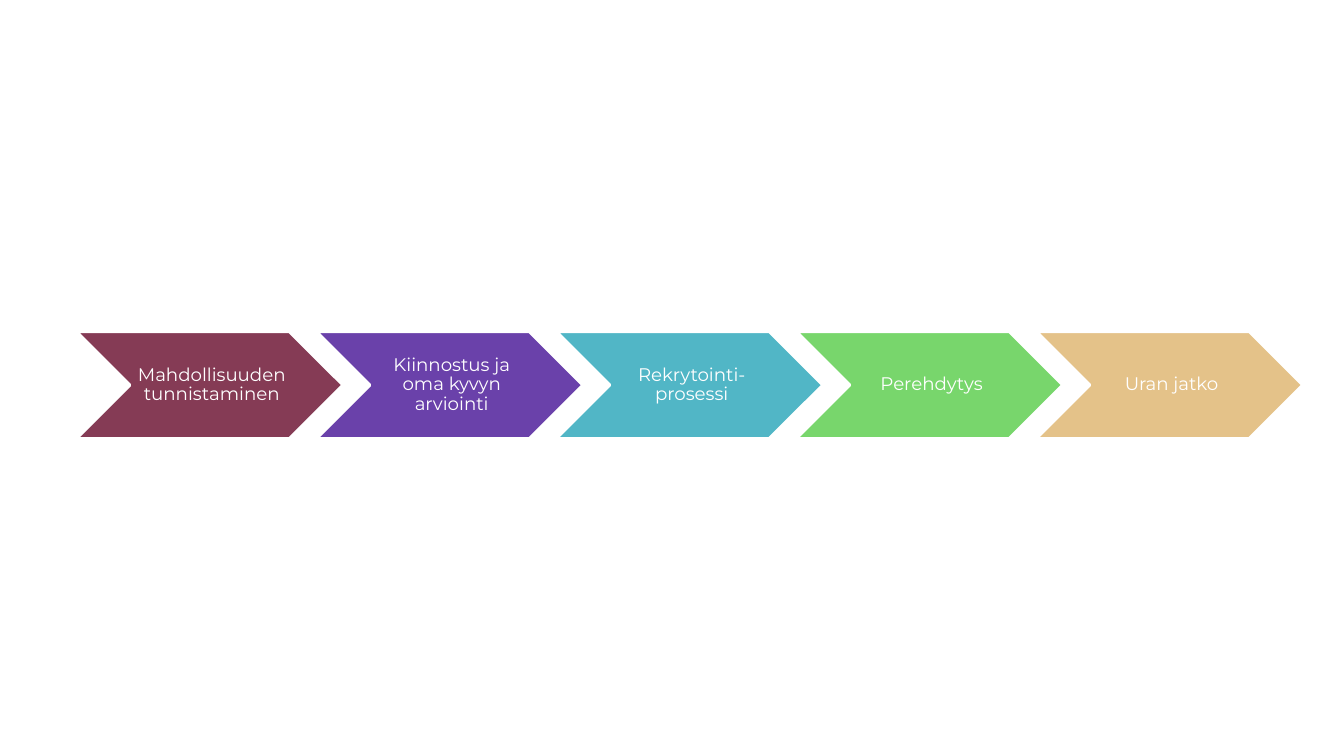
from dataclasses import dataclass

from pptx import Presentation
from pptx.dml.color import RGBColor
from pptx.enum.shapes import MSO_SHAPE as Shape
from pptx.enum.text import MSO_ANCHOR as Anchor, PP_ALIGN as Align
from pptx.util import Inches, Pt


@dataclass(frozen=True)
class Theme:
    """Colours and type of the slide."""
    font: str = "Montserrat"
    text_size: float = 13
    outline_width: float = 2
    white: str = "FFFFFF"
    plum: str = "853B55"
    violet: str = "6A41AA"
    teal: str = "51B6C6"
    green: str = "78D66C"
    sand: str = "E4C289"


THEME = Theme()
STEPS = [
    ("Mahdollisuuden tunnistaminen", THEME.plum),
    ("Kiinnostus ja oma kyvyn arviointi", THEME.violet),
    ("Rekrytointi-prosessi", THEME.teal),
    ("Perehdytys", THEME.green),
    ("Uran jatko", THEME.sand),
]
FIRST_LEFT, TOP, WIDTH, HEIGHT = 0.76, 3.29, 2.64, 1.06
STEP_PITCH = 2.38


def write_label(shape, text):
    """Write a centred label inside a shape."""
    frame = shape.text_frame
    frame.word_wrap = True
    frame.vertical_anchor = Anchor.MIDDLE
    frame.margin_left = Inches(0.06)
    frame.margin_top = frame.margin_right = frame.margin_bottom = Inches(0.02)
    paragraph = frame.paragraphs[0]
    paragraph.alignment = Align.CENTER
    paragraph.line_spacing = 0.9
    run = paragraph.add_run()
    run.text = text
    run.font.name = THEME.font
    run.font.size = Pt(THEME.text_size)
    run.font.color.rgb = RGBColor.from_string(THEME.white)


def add_step(slide, left, text, colour):
    """Add one chevron of the process."""
    shape = slide.shapes.add_shape(
        Shape.CHEVRON, Inches(left), Inches(TOP), Inches(WIDTH), Inches(HEIGHT))
    shape.shadow.inherit = False
    shape.fill.solid()
    shape.fill.fore_color.rgb = RGBColor.from_string(colour)
    shape.line.color.rgb = RGBColor.from_string(THEME.white)
    shape.line.width = Pt(THEME.outline_width)
    write_label(shape, text)


def main():
    """Build and save the slide."""
    presentation = Presentation()
    presentation.slide_width = Inches(13.33)
    presentation.slide_height = Inches(7.5)
    slide = presentation.slides.add_slide(presentation.slide_layouts[6])
    for index, (text, colour) in enumerate(STEPS):
        add_step(slide, FIRST_LEFT + index * STEP_PITCH, text, colour)
    presentation.save("out.pptx")


if __name__ == "__main__":
    main()
